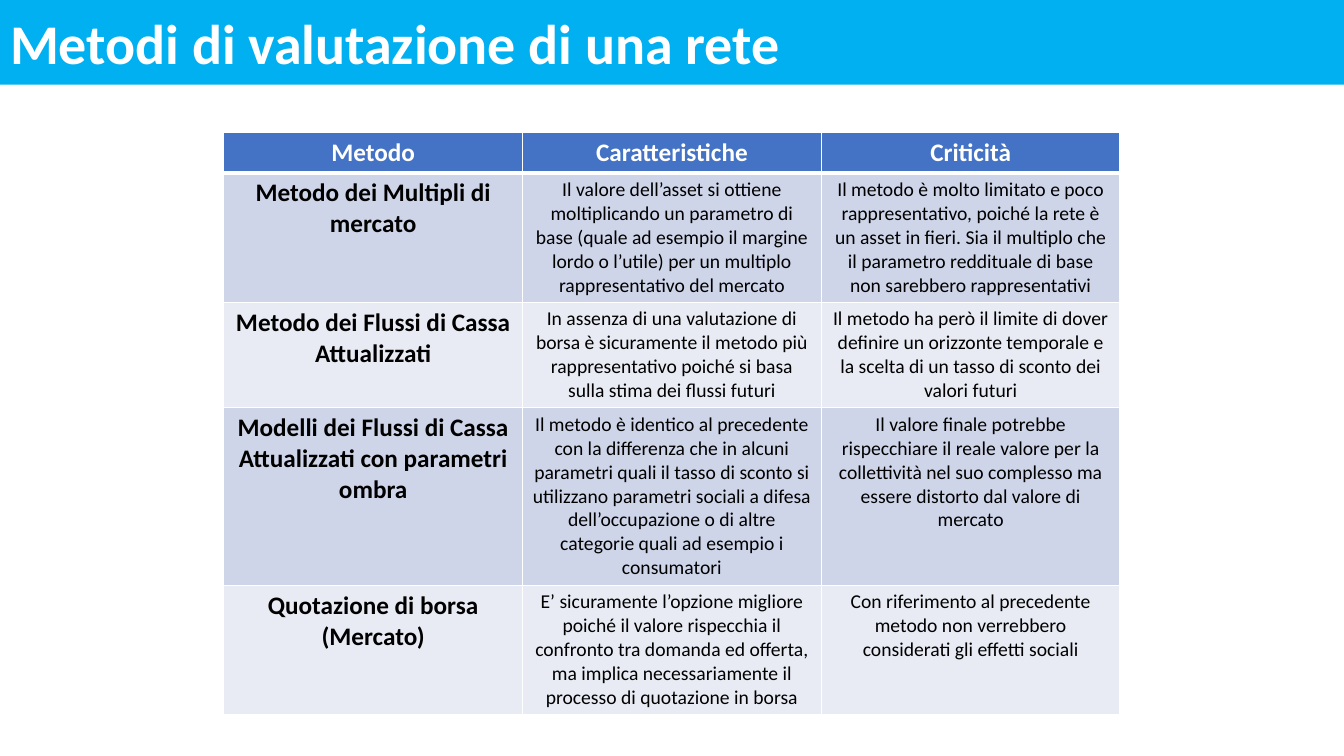
from dataclasses import dataclass

from lxml import etree
from pptx import Presentation
from pptx import util as u
from pptx.dml.color import RGBColor
from pptx.enum import text
from pptx.oxml import ns


@dataclass(frozen=True)
class Theme:
    font: str = "Calibri"
    banner: str = "00B0F0"
    header: str = "4472C4"
    bands: tuple = ("CFD5E9", "E8EBF4")
    light: str = "FFFFFF"
    dark: str = "000000"
    title_size: int = 40
    heading_size: int = 18
    body_size: int = 14
    thin_line: float = 0.96
    thick_line: float = 3


THEME = Theme()
TITLE = "Metodi di valutazione di una rete"
METHODS = [
    ("Metodo", "Caratteristiche", "Criticità"),
    ("Metodo dei Multipli di mercato",
     "Il valore dell’asset si ottiene moltiplicando un parametro di base (quale ad esempio "
     "il margine lordo o l’utile) per un multiplo rappresentativo del mercato",
     "Il metodo è molto limitato e poco rappresentativo, poiché la rete è un asset in fieri. "
     "Sia il multiplo che il parametro reddituale di base non sarebbero rappresentativi"),
    ("Metodo dei Flussi di Cassa Attualizzati",
     "In assenza di una valutazione di borsa è sicuramente il metodo più rappresentativo "
     "poiché si basa sulla stima dei flussi futuri",
     "Il metodo ha però il limite di dover definire un orizzonte temporale e la scelta di "
     "un tasso di sconto dei valori futuri"),
    ("Modelli dei Flussi di Cassa Attualizzati con parametri ombra",
     "Il metodo è identico al precedente con la differenza che in alcuni parametri quali il "
     "tasso di sconto si utilizzano parametri sociali a difesa dell’occupazione o di altre "
     "categorie quali ad esempio i consumatori",
     "Il valore finale potrebbe rispecchiare il reale valore per la collettività nel suo "
     "complesso ma essere distorto dal valore di mercato"),
    ("Quotazione di borsa (Mercato)",
     "E’ sicuramente l’opzione migliore poiché il valore rispecchia il confronto tra domanda "
     "ed offerta, ma implica necessariamente il processo di quotazione in borsa",
     "Con riferimento al precedente metodo non verrebbero considerati gli effetti sociali"),
]
ROW_HEIGHTS = (0.4, 1.28, 1.04, 1.76, 1.28)


def paint(target, color):
    target.fill.solid()
    target.fill.fore_color.rgb = RGBColor.from_string(color)


def write(frame, content, size, color, bold=False, align=text.PP_ALIGN.LEFT):
    paragraph = frame.paragraphs[0]
    paragraph.alignment = align
    run = paragraph.add_run()
    run.text = content
    run.font.name = THEME.font
    run.font.size = u.Pt(size)
    run.font.bold = bold
    run.font.color.rgb = RGBColor.from_string(color)


def add_borders(cell, top, bottom):
    """Draw light borders; top and bottom are widths in points."""
    properties = cell._tc.get_or_add_tcPr()
    widths = {"lnL": THEME.thin_line, "lnR": THEME.thin_line, "lnT": top, "lnB": bottom}
    for side, width in widths.items():
        line = etree.SubElement(properties, ns.qn(f"a:{side}"), w=str(u.Pt(width)))
        fill = etree.SubElement(line, ns.qn("a:solidFill"))
        etree.SubElement(fill, ns.qn("a:srgbClr"), val=THEME.light)


def add_banner(slide, left, top, width, height):
    title = slide.shapes.title
    title.left, title.top, title.width, title.height = map(u.Inches, (left, top, width, height))
    paint(title, THEME.banner)
    frame = title.text_frame
    frame.word_wrap = True
    frame.auto_size = text.MSO_AUTO_SIZE.NONE
    frame.vertical_anchor = text.MSO_ANCHOR.MIDDLE
    write(frame, TITLE, THEME.title_size, THEME.light, bold=True)


def add_methods_table(slide, left, top, width):
    box = map(u.Inches, (left, top, width, sum(ROW_HEIGHTS)))
    table = slide.shapes.add_table(len(METHODS), len(METHODS[0]), *box).table
    for row, height in zip(table.rows, ROW_HEIGHTS):
        row.height = u.Inches(height)
    for row_index, entries in enumerate(METHODS):
        is_header = row_index == 0
        for column_index, content in enumerate(entries):
            cell = table.cell(row_index, column_index)
            is_heading = is_header or column_index == 0
            add_borders(cell,
                        top=THEME.thick_line if row_index == 1 else THEME.thin_line,
                        bottom=THEME.thick_line if is_header else THEME.thin_line)
            paint(cell, THEME.header if is_header else THEME.bands[(row_index - 1) % 2])
            write(cell.text_frame, content,
                  size=THEME.heading_size if is_heading else THEME.body_size,
                  color=THEME.light if is_header else THEME.dark,
                  bold=is_heading, align=text.PP_ALIGN.CENTER)


def main():
    presentation = Presentation()
    presentation.slide_width = u.Inches(13.33)
    presentation.slide_height = u.Inches(7.5)
    title_only = presentation.slide_layouts.get_by_name("Title Only")
    slide = presentation.slides.add_slide(title_only)
    add_banner(slide, 0, 0, 13.33, 0.84)
    add_methods_table(slide, 2.22, 1.31, 8.89)
    presentation.save("out.pptx")


if __name__ == "__main__":
    main()
